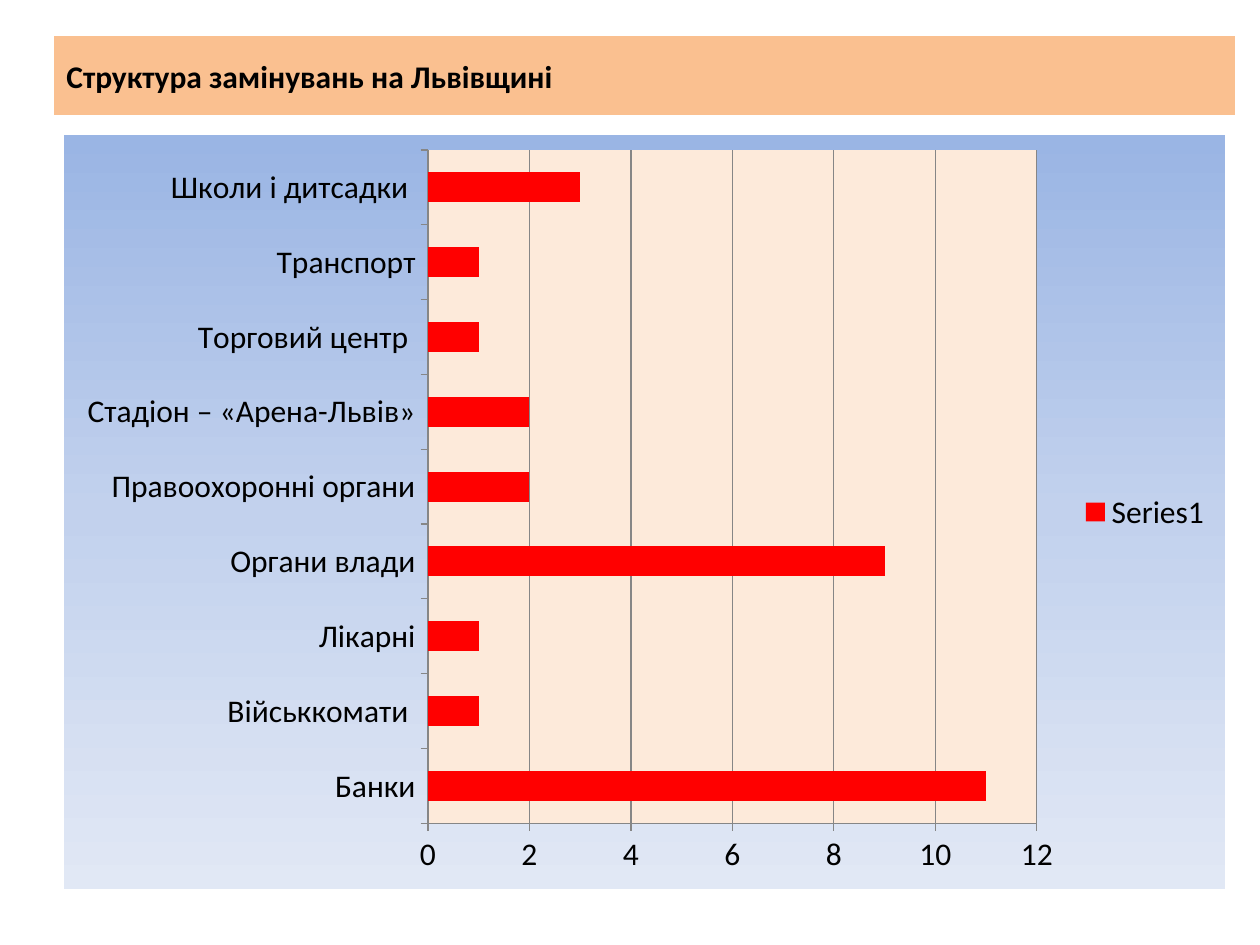
from lxml import etree
from pptx import Presentation
from pptx.chart.data import CategoryChartData
from pptx.dml.color import RGBColor
from pptx.enum.chart import XL_CHART_TYPE, XL_LEGEND_POSITION, XL_TICK_MARK
from pptx.enum.shapes import MSO_SHAPE
from pptx.enum.text import MSO_ANCHOR, PP_ALIGN
from pptx.oxml import parse_xml
from pptx.oxml.ns import nsdecls, qn
from pptx.util import Pt

BAR = XL_CHART_TYPE.BAR_CLUSTERED
RIGHT = XL_LEGEND_POSITION.RIGHT
OUTSIDE = XL_TICK_MARK.OUTSIDE
RECTANGLE = MSO_SHAPE.RECTANGLE
MIDDLE = MSO_ANCHOR.MIDDLE
LEFT = PP_ALIGN.LEFT

PX = 914400 / 126
THEME = {
    "font": "Calibri",
    "size": Pt(18),
    "text": RGBColor.from_string("000000"),
    "title_fill": RGBColor.from_string("FAC090"),
    "bar": RGBColor.from_string("FF0000"),
    "line": RGBColor.from_string("868686"),
    "plot_fill": "FDEADA",
    "gradient": [(0, "9AB5E4"), (50, "C2D1ED"), (100, "E1E8F5")],
}
INCIDENTS = {
    "Банки": 11,
    "Військкомати ": 1,
    "Лікарні": 1,
    "Органи влади": 9,
    "Правоохоронні органи": 2,
    "Стадіон – «Арена-Львів»": 2,
    "Торговий центр ": 1,
    "Транспорт": 1,
    "Школи і дитсадки ": 3,
}


def box(*lengths):
    return [round(length * PX) for length in lengths]


def area_format(fill):
    return parse_xml(
        f'<c:spPr {nsdecls("c", "a")}>{fill}<a:ln><a:noFill/></a:ln></c:spPr>'
    )


presentation = Presentation()
presentation.slide_width, presentation.slide_height = box(1260, 945)
slide = presentation.slides.add_slide(presentation.slide_layouts[6])

chart_data = CategoryChartData()
chart_data.categories = list(INCIDENTS)
chart_data.add_series("Series1", list(INCIDENTS.values()))
chart = slide.shapes.add_chart(BAR, *box(64, 135, 1161, 754), chart_data).chart
chart.has_title = False
chart.font.name = THEME["font"]
chart.font.size = THEME["size"]
chart.font.color.rgb = THEME["text"]
chart.has_legend = True
chart.legend.position = RIGHT
chart.legend.include_in_layout = False

plot = chart.plots[0]
plot.gap_width = 150
plot.vary_by_categories = False
bars = plot.series[0].format.fill
bars.solid()
bars.fore_color.rgb = THEME["bar"]

for axis in (chart.category_axis, chart.value_axis):
    axis.major_tick_mark = OUTSIDE
    axis.format.line.color.rgb = THEME["line"]
    axis.format.line.width = Pt(0.75)
value_axis = chart.value_axis
value_axis.minimum_scale = 0
value_axis.maximum_scale = 12
value_axis.major_unit = 2
value_axis.has_major_gridlines = True
value_axis.major_gridlines.format.line.color.rgb = THEME["line"]
value_axis.major_gridlines.format.line.width = Pt(0.75)

stops = "".join(
    f'<a:gs pos="{position * 1000}"><a:srgbClr val="{color}"/></a:gs>'
    for position, color in THEME["gradient"]
)
chart_element = chart.element.find(qn("c:chart"))
chart_element.addnext(area_format(
    f'<a:gradFill><a:gsLst>{stops}</a:gsLst><a:lin ang="5400000" scaled="0"/></a:gradFill>'
))
plot_area = chart_element.find(qn("c:plotArea"))
plot_area.append(area_format(
    f'<a:solidFill><a:srgbClr val="{THEME["plot_fill"]}"/></a:solidFill>'
))
for default_layout in plot_area.findall(qn("c:layout")):
    plot_area.remove(default_layout)
layout = etree.Element(qn("c:layout"))
manual_layout = etree.SubElement(layout, qn("c:manualLayout"))
for tag, value in [
    ("layoutTarget", "inner"), ("xMode", "edge"), ("yMode", "edge"),
    ("x", "0.3135"), ("y", "0.02"), ("w", "0.5245"), ("h", "0.893"),
]:
    etree.SubElement(manual_layout, qn(f"c:{tag}"), val=value)
plot_area.insert(0, layout)

title = slide.shapes.add_shape(RECTANGLE, *box(54, 36, 1181, 79))
title.shadow.inherit = False
title.fill.solid()
title.fill.fore_color.rgb = THEME["title_fill"]
title.line.fill.background()
title.text_frame.word_wrap = True
title.text_frame.vertical_anchor = MIDDLE
paragraph = title.text_frame.paragraphs[0]
paragraph.text = "Структура замінувань на Львівщині"
paragraph.alignment = LEFT
paragraph.font.name = THEME["font"]
paragraph.font.size = THEME["size"]
paragraph.font.bold = True
paragraph.font.color.rgb = THEME["text"]

presentation.save("out.pptx")
